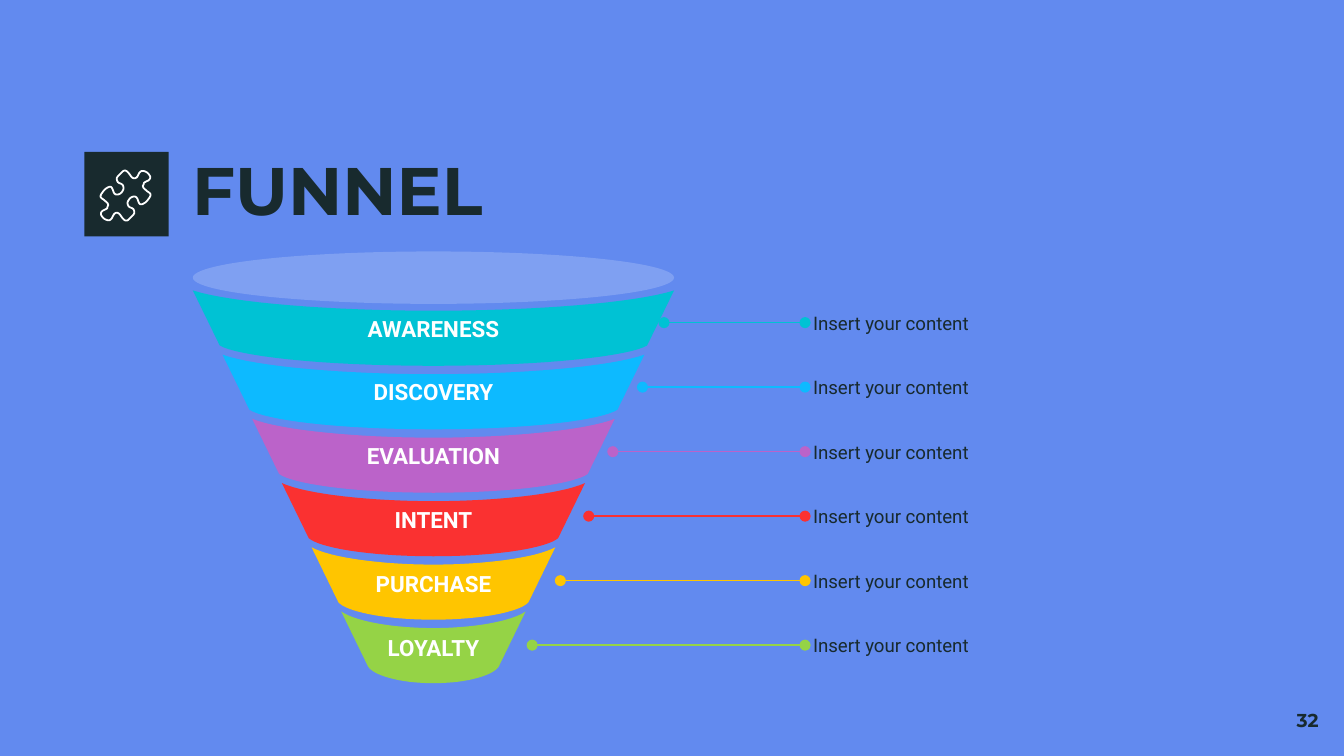
from lxml.etree import SubElement
from pptx import Presentation
from pptx.dml.color import RGBColor
from pptx.enum.shapes import MSO_CONNECTOR as Connector, MSO_SHAPE as Preset
from pptx.enum.text import MSO_ANCHOR as Anchor, PP_ALIGN as Align
from pptx.oxml.ns import qn
from pptx.util import Pt

BACKGROUND = RGBColor(0x62, 0x8A, 0xEF)
INK = RGBColor(0x18, 0x2A, 0x2E)
WHITE = RGBColor(0xFF, 0xFF, 0xFF)
TURQUOISE = RGBColor(0x00, 0xC2, 0xD4)
BLUE = RGBColor(0x0D, 0xBA, 0xFF)
PURPLE = RGBColor(0xBB, 0x63, 0xC9)
RED = RGBColor(0xFA, 0x31, 0x31)
YELLOW = RGBColor(0xFF, 0xC5, 0x00)
GREEN = RGBColor(0x95, 0xD3, 0x46)

STAGES = [
    ("AWARENESS", TURQUOISE, 355.7),
    ("DISCOVERY", BLUE, 344.2),
    ("EVALUATION", PURPLE, 328.3),
    ("INTENT", RED, 315.4),
    ("PURCHASE", YELLOW, 300.2),
    ("LOYALTY", GREEN, 285.1),
]
CONTENT = "Insert your content"
PITCH = 34.4
PUZZLE_GRID = 37
PUZZLE_HALF = [
    (32, 9), (34, 8), (36, 7), (37, 5), (36, 3), (34, 1), (31, 0), (29, 1), (28, 3),
    (27, 5), (25, 6), (23, 5), (21, 2), (19, 0), (17, 0), (15, 2), (12, 5), (12, 7),
    (13, 9), (16, 10), (17, 12), (17, 14), (15, 17), (12, 18), (10, 17), (9, 14),
    (8, 12), (6, 12), (3, 14), (0, 18), (0, 20), (3, 22), (6, 25), (5, 27),
]


def write(text_frame, text, size, font, color, bold=False, align=Align.LEFT, anchor=Anchor.MIDDLE, inset=0):
    """Fill a text frame with one formatted paragraph."""
    text_frame.text = text
    text_frame.word_wrap = True
    text_frame.vertical_anchor = anchor
    text_frame.margin_left = text_frame.margin_right = Pt(inset)
    text_frame.margin_top = text_frame.margin_bottom = Pt(inset)
    paragraph = text_frame.paragraphs[0]
    paragraph.alignment = align
    run_font = paragraph.runs[0].font
    run_font.name, run_font.size, run_font.bold = font, Pt(size), bold
    run_font.color.rgb = color
    return paragraph


def add_text(slide, box, *style, **options):
    """Add a text box and return its paragraph."""
    shape = slide.shapes.add_textbox(*map(Pt, box))
    return write(shape.text_frame, *style, **options)


def add_filled(slide, preset, box, color):
    """Add a flat preset shape without an outline."""
    shape = slide.shapes.add_shape(preset, *map(Pt, box))
    shape.shadow.inherit = False
    shape.fill.solid()
    shape.fill.fore_color.rgb = color
    shape.line.fill.background()
    return shape


def add_outline(slide, points):
    """Add a closed freeform through points."""
    corners = [(Pt(x), Pt(y)) for x, y in points]
    builder = slide.shapes.build_freeform(*corners[0], scale=1.0)
    builder.add_line_segments(corners[1:], close=True)
    shape = builder.convert_to_shape()
    shape.shadow.inherit = False
    return shape


def bezier(start, first, second, end, steps=16):
    """Sample a cubic curve."""
    points = []
    for step in range(steps + 1):
        t = step / steps
        weights = ((1 - t) ** 3, 3 * t * (1 - t) ** 2, 3 * t * t * (1 - t), t ** 3)
        points.append(tuple(
            sum(weight * value for weight, value in zip(weights, values))
            for values in zip(start, first, second, end)
        ))
    return points


def round_corners(points):
    """Cut every corner of a closed outline."""
    following = points[1:] + points[:1]
    return [
        (x + share * (next_x - x), y + share * (next_y - y))
        for (x, y), (next_x, next_y) in zip(points, following)
        for share in (0.25, 0.75)
    ]


def add_puzzle(slide, left, top, size):
    """Draw the puzzle piece from a half and its half turn."""
    points = PUZZLE_HALF + [(PUZZLE_GRID - x, PUZZLE_GRID - y) for x, y in PUZZLE_HALF]
    scale = size / PUZZLE_GRID
    shape = add_outline(slide, [
        (left + x * scale, top + y * scale) for x, y in round_corners(points)
    ])
    shape.fill.background()
    shape.line.color.rgb = WHITE
    shape.line.width = Pt(0.96)


def add_header(slide, left, top, width, height):
    """Place the icon tile and the title."""
    add_filled(slide, Preset.RECTANGLE, (left, top, height, height), INK)
    add_puzzle(slide, left + 8.7, top + 10, 26.8)
    paragraph = add_text(slide, (left + 57.8, top, width - 57.8, height),
                         "FUNNEL", 36, "Montserrat", INK, bold=True)
    paragraph.line_spacing = 0.9


def add_band(slide, center, top, half_width, sag, label, color):
    """Draw one curved funnel stage with its label."""
    base = half_width - 14.4
    shoulder = top + 29.5
    lower = bezier((-base, shoulder), (-0.92 * base, shoulder + 0.5 * sag),
                   (-0.54 * base, shoulder + sag), (0, shoulder + sag))
    upper = bezier((half_width, top), (0.84 * half_width, top + 0.62 * sag),
                   (0.41 * half_width, top + sag), (0, top + sag))
    sides = [lower + [(-x, y) for x, y in lower[-2::-1]],
             upper + [(-x, y) for x, y in upper[-2::-1]]]
    shape = add_outline(slide, [(center + x, y) for side in sides for x, y in side])
    shape.fill.solid()
    shape.fill.fore_color.rgb = color
    shape.line.fill.background()
    write(shape.text_frame, label, 12, "Roboto", WHITE, bold=True, align=Align.CENTER)


def add_funnel(slide, left, top, width):
    """Stack the stages below the translucent rim."""
    center = left + width / 2
    for index, (label, color, _) in enumerate(STAGES):
        add_band(slide, center, top + 20.9 + index * PITCH, width / 2 - index * 15.9,
                 10.9 - index * 0.4, label, color)
    rim = add_filled(slide, Preset.OVAL, (left, top, width, 28.1), WHITE)
    color_element = rim.fill._xPr.find(qn("a:solidFill"))[0]
    SubElement(color_element, qn("a:alpha"), val="19000")


def add_callouts(slide, left, top, width, height):
    """Lead a dotted line from each stage to its note."""
    for index, (_, color, start) in enumerate(STAGES):
        row = top + index * 34.56
        middle = row + height / 2
        line = slide.shapes.add_connector(
            Connector.STRAIGHT, Pt(start), Pt(middle), Pt(left - 4.3), Pt(middle))
        line.line.color.rgb = color
        line.line.width = Pt(0.75)
        outline = line.line._get_or_add_ln()
        for end in ("a:headEnd", "a:tailEnd"):
            SubElement(outline, qn(end), type="oval")
        SubElement(line._element.spPr, qn("a:effectLst"))
        add_text(slide, (left, row, width, height), CONTENT, 10, "Roboto", INK)


def main():
    """Build and save the funnel slide."""
    presentation = Presentation()
    presentation.slide_width, presentation.slide_height = Pt(720), Pt(405)
    slide = presentation.slides.add_slide(presentation.slide_layouts[6])
    slide.background.fill.solid()
    slide.background.fill.fore_color.rgb = BACKGROUND
    add_header(slide, 45.2, 81.4, 625, 45.2)
    add_text(slide, (670.3, 373.7, 43.2, 31), "32", 10, "Montserrat", INK, bold=True,
             align=Align.RIGHT, anchor=Anchor.TOP, inset=7.2)
    add_funnel(slide, 103.3, 134.7, 257.8)
    add_callouts(slide, 435.6, 160.6, 199.4, 24.5)
    presentation.save("out.pptx")


if __name__ == "__main__":
    main()
